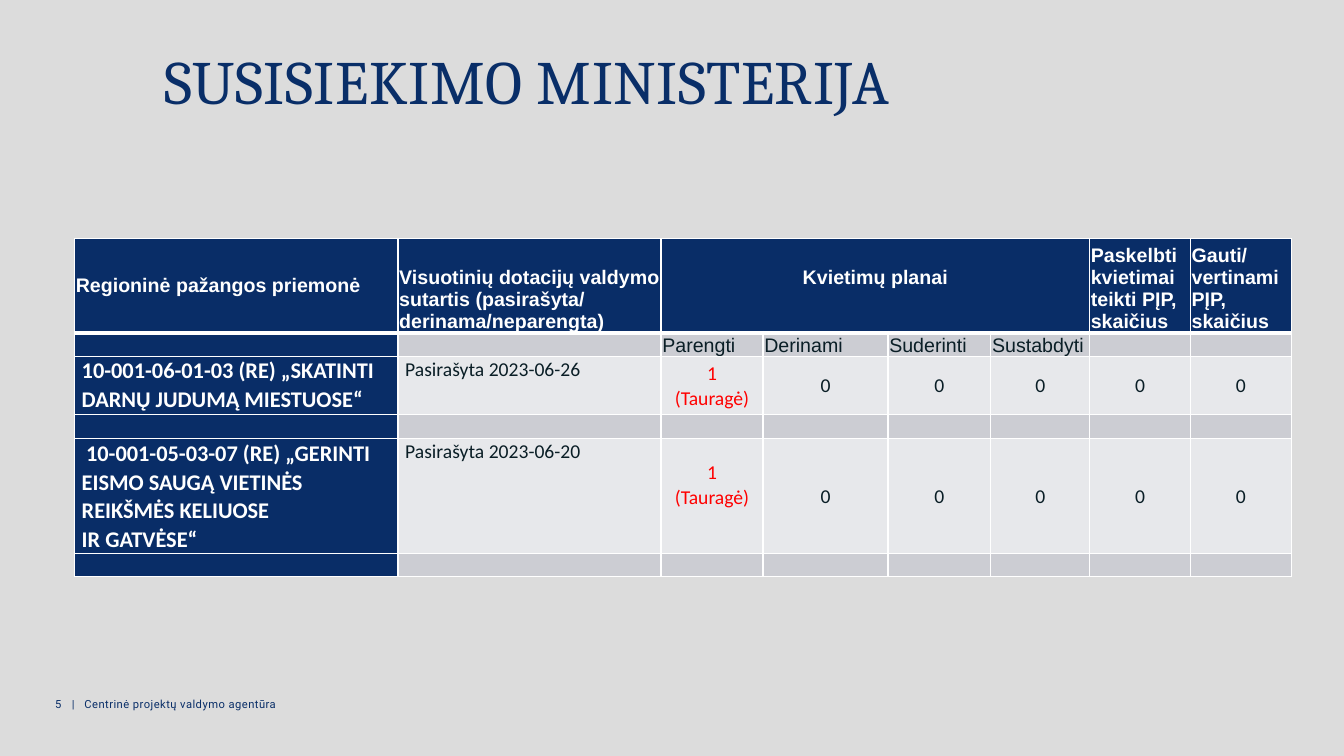
from pptx import Presentation
from pptx import util as u
from pptx.dml.color import RGBColor
from pptx.enum import text as t
from pptx.oxml import parse_xml
from pptx.oxml.ns import nsdecls

NAVY, WHITE, INK, RED = "092D67", "FFFFFF", "0A1E26", "FF0000"
TITLE_BLUE, PAGE_GREY, BAND, PALE = "092E68", "DCDCDC", "CCCDD3", "E7E8EB"
COLUMNS = [8.15, 6.63, 2.57, 3.15, 2.59, 2.49, 2.54, 2.54]
ROWS = [2.24, 0.56, 1.46, 0.62, 2.9, 0.56]
HEADERS = [
    "Regioninė pažangos priemonė",
    "Visuotinių dotacijų valdymo sutartis (pasirašyta/ derinama/neparengta)",
    "Kvietimų planai", None, None, None,
    "Paskelbti kvietimai teikti PĮP, skaičius",
    "Gauti/vertinami PĮP, skaičius",
]
STAGES = ["", "", "Parengti", "Derinami", "Suderinti", "Sustabdyti", "", ""]
MEASURES = {
    2: ("10-001-06-01-03 (RE) „SKATINTI DARNŲ JUDUMĄ MIESTUOSE“",
        "Pasirašyta 2023-06-26", 0, 0),
    4: ("10-001-05-03-07 (RE) „GERINTI EISMO SAUGĄ VIETINĖS REIKŠMĖS KELIUOSE\n"
        "IR GATVĖSE“", "Pasirašyta 2023-06-20", 0.6, 0.11),
}
LEFT, CENTER = t.PP_ALIGN.LEFT, t.PP_ALIGN.CENTER
TOP, MIDDLE, BOTTOM = t.MSO_ANCHOR.TOP, t.MSO_ANCHOR.MIDDLE, t.MSO_ANCHOR.BOTTOM


def colour(value):
    return RGBColor.from_string(value)


def write(frame, content, size, font, ink, bold=False, align=LEFT,
          line=None, after=0, spacing=0, indent=0, tabs=()):
    for index, words in enumerate(content.split("\n")):
        para = frame.paragraphs[0] if index == 0 else frame.add_paragraph()
        para.alignment = align
        para.space_before, para.space_after = u.Pt(0), u.Pt(after)
        if line:
            para.line_spacing = line
        properties = para._p.get_or_add_pPr()
        if indent and index == 0:
            properties.set("indent", str(u.Cm(indent)))
        if tabs:
            stops = "".join(f'<a:tab pos="{u.Cm(stop)}" algn="l"/>' for stop in tabs)
            properties.append(parse_xml(f'<a:tabLst {nsdecls("a")}>{stops}</a:tabLst>'))
        span = para.add_run()
        span.text = words
        span.font.size, span.font.name, span.font.bold = u.Pt(size), font, bold
        span.font.color.rgb = colour(ink)
        if spacing:
            span._r.get_or_add_rPr().set("spc", str(round(spacing * 100)))


def add_title(page):
    title = page.shapes.title
    title.left, title.top = u.Cm(3.94), u.Cm(1.32)
    title.width, title.height = u.Cm(28.6), u.Cm(1.65)
    frame = title.text_frame
    frame.auto_size = t.MSO_AUTO_SIZE.NONE
    frame.vertical_anchor = TOP
    frame.margin_left = frame.margin_right = u.Cm(0.2)
    write(frame, "SUSISIEKIMO MINISTERIJA", 44, "Cambria", TITLE_BLUE,
          line=0.8, after=12, spacing=0.4)


def add_footer(page):
    box = page.shapes.add_textbox(u.Cm(1.14), u.Cm(17.45), u.Cm(8.13), u.Cm(1.02))
    box.text_frame.word_wrap = True
    write(box.text_frame, "5\t|\tCentrinė projektų valdymo agentūra", 8, "Roboto",
          TITLE_BLUE, spacing=0.3, tabs=(0.42, 0.74))


def style_cell(cell, fill, anchor=TOP, side=0.0, bottom=0.0, bottom_line=1):
    cell.margin_left = cell.margin_right = u.Cm(side)
    cell.margin_top, cell.margin_bottom = u.Cm(0), u.Cm(bottom)
    cell.vertical_anchor = anchor
    properties = cell._tc.get_or_add_tcPr()
    for edge, width in zip("LRTB", (1, 1, 1, bottom_line)):
        properties.append(parse_xml(
            f'<a:ln{edge} {nsdecls("a")} w="{u.Pt(width)}"><a:solidFill>'
            f'<a:srgbClr val="{WHITE}"/></a:solidFill></a:ln{edge}>'))
    cell.fill.solid()
    cell.fill.fore_color.rgb = colour(fill)


def fill_header(table):
    table.cell(0, 2).merge(table.cell(0, 5))
    for column, words in enumerate(HEADERS):
        cell = table.cell(0, column)
        planning = column == 2
        style_cell(cell, NAVY, MIDDLE if column == 0 else BOTTOM, 0.03,
                   1.1 if planning else 0, 3)
        if words:
            write(cell.text_frame, words, 14, "Arial", WHITE, True,
                  CENTER if planning else LEFT)


def fill_band(table, row, labels):
    for column, words in enumerate(labels):
        cell = table.cell(row, column)
        style_cell(cell, BAND if column else NAVY, BOTTOM, 0.03)
        if words:
            write(cell.text_frame, words, 14, "Arial", INK)
        else:
            cell.text_frame.paragraphs[0]._p.append(
                parse_xml(f'<a:endParaRPr {nsdecls("a")} sz="800"/>'))


def fill_measure(table, row, name, status, lift, indent):
    for column in range(len(COLUMNS)):
        cell = table.cell(row, column)
        style_cell(cell, PALE if column else NAVY, MIDDLE if column > 1 else TOP,
                   0.18, lift if column == 2 else 0)
        if column == 0:
            write(cell.text_frame, name, 16, "Calibri", WHITE, True,
                  line=1.05, indent=indent)
        elif column == 1:
            write(cell.text_frame, status, 14, "Calibri", INK, line=1.05)
        else:
            words, ink = ("1\n(Tauragė)", RED) if column == 2 else ("0", INK)
            write(cell.text_frame, words, 14, "Calibri", ink, align=CENTER, line=1.05)


def add_plan_table(page):
    table = page.shapes.add_table(len(ROWS), len(COLUMNS), u.Cm(1.88), u.Cm(6.01),
                                  u.Cm(sum(COLUMNS)), u.Cm(sum(ROWS))).table
    table.first_row = table.horz_banding = False
    for column, width in zip(table.columns, COLUMNS):
        column.width = u.Cm(width)
    for row, height in zip(table.rows, ROWS):
        row.height = u.Cm(height)
    fill_header(table)
    fill_band(table, 1, STAGES)
    for row, measure in MEASURES.items():
        fill_measure(table, row, *measure)
        fill_band(table, row + 1, [""] * len(COLUMNS))


def main():
    deck = Presentation()
    deck.slide_width, deck.slide_height = u.Cm(33.87), u.Cm(19.05)
    page = deck.slides.add_slide(deck.slide_layouts[5])
    page.background.fill.solid()
    page.background.fill.fore_color.rgb = colour(PAGE_GREY)
    add_title(page)
    add_footer(page)
    add_plan_table(page)
    deck.save("out.pptx")


if __name__ == "__main__":
    main()
